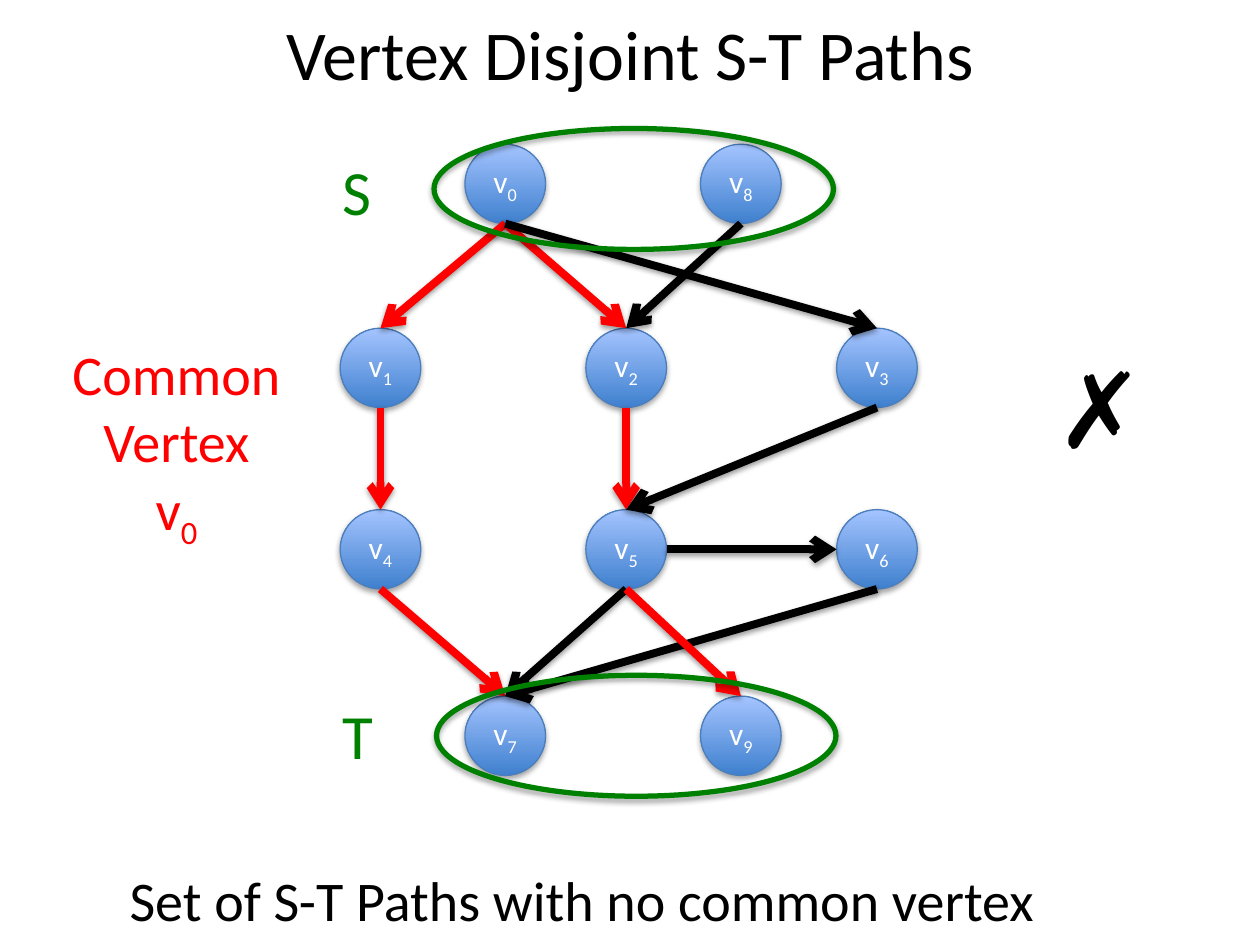
from typing import NamedTuple

import pptx
import pptx.dml.color
import pptx.enum.shapes
import pptx.enum.text
import pptx.util
from lxml import etree
from pptx.oxml.ns import qn

HUES = {
    "black": "000000", "red": "FF0000", "green": "008000", "white": "FFFFFF",
    "deep": "3F80CE", "pale": "A4C4FF", "rim": "4B7EBC",
}
WIDE, HIGH = 10, 7.5
# Centres of the graph's columns and rows, in inches
COLS = (3.02, 4.01, 4.97, 5.88, 6.96)
ROWS = (1.46, 2.92, 4.36, 5.84)
NODE_W, NODE_H = 0.64, 0.63
RING_W, RING_H = 3.17, 0.96
SIDES = {"top": (0, -0.5), "base": (0, 0.5), "left": (-0.5, 0), "right": (0.5, 0)}
ALIGN = pptx.enum.text.PP_ALIGN
OVAL = pptx.enum.shapes.MSO_SHAPE.OVAL


class Node(NamedTuple):
    col: int
    row: int


class Edge(NamedTuple):
    start: int
    end: int
    hue: str
    leave: str = "base"
    enter: str = "top"


class Label(NamedTuple):
    box: tuple  # shares of the slide: left, top, width, height
    lines: tuple  # "_" starts a subscript
    size: int
    hue: str
    font: str = "Calibri"
    align: ALIGN = ALIGN.LEFT
    wrap: bool = False


# Vertices, listed by number
NODES = (
    Node(1, 0), Node(0, 1), Node(2, 1), Node(4, 1), Node(0, 2),
    Node(2, 2), Node(4, 2), Node(1, 3), Node(3, 0), Node(3, 3),
)
EDGES = (
    Edge(0, 1, "red"), Edge(1, 4, "red"), Edge(4, 7, "red"),
    Edge(0, 2, "red"), Edge(2, 5, "red"), Edge(5, 7, "black"),
    Edge(5, 6, "black", "right", "left"), Edge(8, 2, "black"),
    Edge(0, 3, "black"), Edge(6, 7, "black"), Edge(3, 5, "black"),
    Edge(5, 9, "red"),
)
RINGS = ((5.05, 5.84), (5.03, 1.5))
LABELS = (
    Label((0.093, 0.909, 0.823, 0.085),
          ("Set of S-T Paths with no common vertex",), 32, "black"),
    Label((0.829, 0.357, 0.069, 0.148), ("✗",), 60, "black", "Arial"),
    Label((0.039, 0.353, 0.202, 0.229), ("Common", "Vertex", "v_0"), 32, "red",
          align=ALIGN.CENTER),
    Label((0.262, 0.731, 0.138, 0.095), ("T",), 36, "green", wrap=True),
    Label((0.262, 0.155, 0.138, 0.095), ("S",), 36, "green", wrap=True),
)


def inch(*spans: float) -> list:
    return [pptx.util.Inches(span) for span in spans]


def share(box: tuple) -> list:
    left, top, width, height = box
    return inch(left * WIDE, top * HIGH, width * WIDE, height * HIGH)


def tint(hue: str) -> pptx.dml.color.RGBColor:
    return pptx.dml.color.RGBColor.from_string(HUES[hue])


def write(para, text: str, size: int, hue: str, font: str = "Calibri",
          align: ALIGN = ALIGN.CENTER) -> None:
    para.alignment = align
    para.font.name, para.font.size = font, pptx.util.Pt(size)
    para.font.color.rgb = tint(hue)
    main, _, sub = text.partition("_")
    para.add_run().text = main
    if sub:
        run = para.add_run()
        run.text = sub
        run._r.get_or_add_rPr().set("baseline", "-25000")


def stroke(shape, hue: str, width: float) -> None:
    shape.line.color.rgb = tint(hue)
    shape.line.width = pptx.util.Pt(width)


def shade(shape, drop: float, alpha: int) -> None:
    """Cast a soft shadow straight down."""
    props = shape._element.spPr
    group = etree.SubElement(props, qn("a:effectLst"))
    cast = etree.SubElement(
        group, qn("a:outerShdw"), blurRad=str(pptx.util.Pt(3.15)),
        dist=str(pptx.util.Pt(drop)), dir="5400000", rotWithShape="0")
    color = etree.SubElement(cast, qn("a:srgbClr"), val=HUES["black"])
    etree.SubElement(color, qn("a:alpha"), val=str(alpha * 1000))


def add_oval(slide, mid: tuple, width: float, height: float):
    return slide.shapes.add_shape(
        OVAL, *inch(mid[0] - width / 2, mid[1] - height / 2, width, height))


def add_node(slide, num: int, node: Node) -> None:
    shape = add_oval(slide, (COLS[node.col], ROWS[node.row]), NODE_W, NODE_H)
    shape.fill.gradient()
    shape.fill.gradient_angle = 90
    for stop, hue in zip(shape.fill.gradient_stops, ("deep", "pale")):
        stop.color.rgb = tint(hue)
    stroke(shape, "rim", 0.75)
    shade(shape, 1.8, 35)
    frame = shape.text_frame
    frame.vertical_anchor = pptx.enum.text.MSO_ANCHOR.MIDDLE
    write(frame.paragraphs[0], f"v_{num}", 18, "white")


def port(num: int, side: str) -> tuple:
    node, (dx, dy) = NODES[num], SIDES[side]
    return COLS[node.col] + dx * NODE_W, ROWS[node.row] + dy * NODE_H


def add_edge(slide, edge: Edge) -> None:
    ends = port(edge.start, edge.leave) + port(edge.end, edge.enter)
    line = slide.shapes.add_connector(
        pptx.enum.shapes.MSO_CONNECTOR.STRAIGHT, *inch(*ends))
    stroke(line, edge.hue, 4.5)
    etree.SubElement(line.line._get_or_add_ln(), qn("a:tailEnd"), type="arrow")
    shade(line, 1.6, 38)


def add_ring(slide, mid: tuple) -> None:
    ring = add_oval(slide, mid, RING_W, RING_H)
    ring.fill.background()
    stroke(ring, "green", 3)
    shade(ring, 1.8, 35)


def add_label(slide, label: Label) -> None:
    frame = slide.shapes.add_textbox(*share(label.box)).text_frame
    frame.word_wrap = label.wrap
    for i, text in enumerate(label.lines):
        para = frame.add_paragraph() if i else frame.paragraphs[0]
        write(para, text, label.size, label.hue, label.font, label.align)


def main() -> None:
    deck = pptx.Presentation()
    deck.slide_width, deck.slide_height = inch(WIDE, HIGH)
    slide = deck.slides.add_slide(deck.slide_layouts.get_by_name("Title Only"))

    # Title
    title = slide.shapes.title
    title.left, title.top, title.width, title.height = share((0.05, 0.008, 0.9, 0.095))
    title.text_frame.vertical_anchor = pptx.enum.text.MSO_ANCHOR.MIDDLE
    write(title.text_frame.paragraphs[0], "Vertex Disjoint S-T Paths", 40, "black")

    # Graph
    for num, node in enumerate(NODES):
        add_node(slide, num, node)
    for edge in EDGES:
        add_edge(slide, edge)

    # Sets S and T
    for mid in RINGS:
        add_ring(slide, mid)

    # Captions
    for label in LABELS:
        add_label(slide, label)
    deck.save("out.pptx")


if __name__ == "__main__":
    main()
